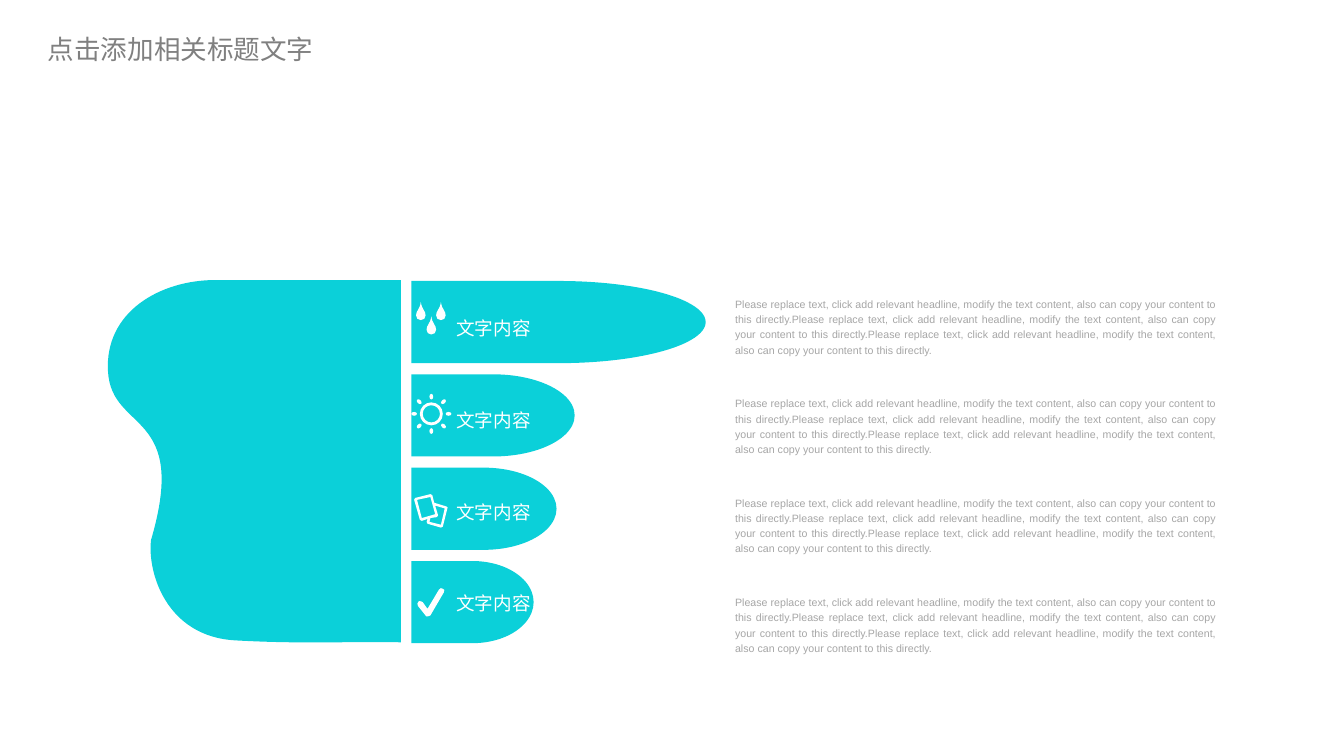
from math import cos, pi, sin

from lxml.etree import SubElement
from pptx import Presentation
from pptx.dml.color import RGBColor
from pptx.enum.shapes import MSO_SHAPE
from pptx.enum.text import MSO_AUTO_SIZE, PP_ALIGN
from pptx.oxml.ns import qn
from pptx.util import Inches, Pt

WIDTH, HEIGHT = 14.06, 7.91
CYAN = RGBColor(0x0B, 0xD0, 0xD9)
WHITE = RGBColor(0xFF, 0xFF, 0xFF)
TITLE_GREY = RGBColor(0x80, 0x80, 0x80)
BODY_GREY = RGBColor(0xA6, 0xA6, 0xA6)

TITLE = "点击添加相关标题文字"
LABEL = "文字内容"
SENTENCE = ("Please replace text, click add relevant headline, modify the text "
            "content, also can copy your content to this directly.")
ROWS = 4
ARC = 0.55

PALM_WIDTH, PALM_HEIGHT = 3.06, 3.79
PALM = [(0.45, 2.72),
        (0.85, 1.36, 0.04, 1.6, 0, 0.96), (-0.04, 0.33, 0.55, 0, 1.12, 0),
        (3.06, 0), (3.06, 3.79), (2.48, 3.78, 2.04, 3.81, 1.33, 3.77),
        (0.61, 3.73, 0.41, 3.06, 0.45, 2.72)]
DROP = [(0, 0), (-0.01, 0.08, -0.05, 0.09, -0.05, 0.14),
        (-0.05, 0.17, -0.03, 0.19, 0, 0.19),
        (0.03, 0.19, 0.05, 0.17, 0.05, 0.14), (0.05, 0.09, 0.01, 0.08, 0, 0)]
DROP_TIPS = [(-0.11, -0.17), (0.1, -0.17), (0, -0.02)]
CARDS = [
    [(0.16, -0.05), (0.03, -0.09), (0.01, -0.17), (-0.01, -0.18),
     (-0.17, -0.14), (-0.18, -0.12), (-0.12, 0.09), (-0.1, 0.1),
     (-0.04, 0.08), (-0.05, 0.11), (-0.04, 0.13), (0.1, 0.17),
     (0.12, 0.16), (0.17, -0.04)],
    [(-0.15, -0.12), (-0.01, -0.15), (0.04, 0.03), (-0.1, 0.07)],
    [(0.1, 0.14), (-0.02, 0.11), (-0.01, 0.07), (0.06, 0.06),
     (0.07, 0.04), (0.04, -0.06), (0.14, -0.03)]]
CHECK = [(-0.04, 0.15), (-0.05, 0.15, -0.06, 0.15, -0.06, 0.14),
         (-0.14, 0.04), (-0.15, 0.02, -0.15, 0.01, -0.13, -0.01),
         (-0.12, -0.01, -0.1, -0.01, -0.09, 0), (-0.04, 0.07),
         (0.08, -0.13), (0.09, -0.15, 0.11, -0.15, 0.12, -0.14),
         (0.14, -0.14, 0.14, -0.12, 0.13, -0.1), (-0.01, 0.14),
         (-0.02, 0.14, -0.03, 0.15, -0.04, 0.15)]


def ellipse(rx, ry, distance=0, angle=0):
    """Return an ellipse moved up by a distance, then turned about the centre."""
    def turn(*nodes):
        """Place unit-circle nodes and join them into one tuple."""
        placed = [(x * rx, y * ry - distance) for x, y in nodes]
        return tuple(v for x, y in placed
                     for v in (x * cos(angle) - y * sin(angle),
                               x * sin(angle) + y * cos(angle)))

    corners = [(1, 0), (0, 1), (-1, 0), (0, -1), (1, 0)]
    curves = [turn((a + ARC * c, b + ARC * d), (c + ARC * a, d + ARC * b), (c, d))
              for (a, b), (c, d) in zip(corners, corners[1:])]
    return [turn((1, 0))] + curves


def paint(shape, color):
    """Give a shape a flat fill without line or shadow."""
    shape.shadow.inherit = False
    shape.fill.solid()
    shape.fill.fore_color.rgb = color
    shape.line.fill.background()


def draw_outlines(s, outlines, left, top, color, width=1, height=1):
    """Draw closed outlines of lines and cubic curves as one freeform."""
    def place(segment):
        """Turn a flat segment into slide positions."""
        return [(Inches(left + x * width), Inches(top + y * height))
                for x, y in zip(segment[::2], segment[1::2])]

    builder, segments = None, []
    for outline in outlines:
        (start,), *rest = map(place, outline)
        if builder is None:
            builder = s.shapes.build_freeform(*start, scale=1.0)
        else:
            builder.move_to(*start)
        builder.add_line_segments([nodes[-1] for nodes in rest], close=True)
        segments += rest
    shape = builder.convert_to_shape()
    paint(shape, color)
    for line, nodes in zip(list(shape.element.iter(qn("a:lnTo"))), segments):
        if len(nodes) == 3:
            curve = line.getparent().makeelement(qn("a:cubicBezTo"))
            for x, y in nodes:
                SubElement(curve, qn("a:pt"), x=str(x - shape.left), y=str(y - shape.top))
            line.getparent().replace(line, curve)


def add_text(s, text, box, font, margins=(0, 0), frame=None, paragraph=None):
    """Add a one-paragraph text box with the given formats."""
    tf = s.shapes.add_textbox(*map(Inches, box)).text_frame
    side, end = map(Inches, margins)
    p = tf.paragraphs[0]
    r = p.add_run()
    r.text = text
    r.font.color.rgb = font["color"]
    insets = {"margin_left": side, "margin_right": side,
              "margin_top": end, "margin_bottom": end}
    styles = {"name": font["name"], "size": Pt(font["size"])}
    for target, formats in ((tf, {**insets, **(frame or {})}),
                            (p, paragraph or {}), (r.font, styles)):
        for name, value in formats.items():
            setattr(target, name, value)


def draw_hand(s, box):
    """Draw the palm and four fingers, each with an icon and a label."""
    left, top, width, height = box
    palm_width = 0.49 * width
    draw_outlines(s, [PALM], left, top, CYAN,
                  palm_width / PALM_WIDTH, height / PALM_HEIGHT)

    finger_left, finger_height = left + palm_width + 0.11, 0.86
    pitch = (height - finger_height) / (ROWS - 1)
    fingers = s.shapes.add_group_shape()
    for row, length in enumerate((3.08, 1.71, 1.52, 1.28)):
        place = finger_left, top + 0.01 + row * pitch, length, finger_height
        paint(fingers.shapes.add_shape(MSO_SHAPE.FLOWCHART_DELAY, *map(Inches, place)), CYAN)

    drops = [[tuple(v + tip[i % 2] for i, v in enumerate(part)) for part in DROP]
             for tip in DROP_TIPS]
    sun = [ellipse(0.12, 0.12), ellipse(0.09, 0.09)]
    sun += [ellipse(0.02, 0.03, 0.18, ray * pi / 4) for ray in range(8)]
    icons = ((drops, 0.06), (sun, 0.1), (CARDS, 0.16), ([CHECK], 0.15))
    for row, (icon, drop) in enumerate(icons):
        label_top = top + 0.34 + row * 0.96
        draw_outlines(s, icon, finger_left + 0.21, label_top + drop, WHITE)
        add_text(s, LABEL, (finger_left + 0.47, label_top, 0.79, 0.28),
                 {"name": "Arial", "size": 14, "color": WHITE},
                 frame={"word_wrap": False, "auto_size": MSO_AUTO_SIZE.SHAPE_TO_FIT_TEXT},
                 paragraph={"line_spacing": 1.2})


def draw_descriptions(s, box):
    """Stack four equal justified descriptions in a box."""
    left, top, width, height = box
    text_height = 0.65
    pitch = (height - text_height) / (ROWS - 1)
    for row in range(ROWS):
        add_text(s, SENTENCE * 3, (left, top + row * pitch, width, text_height),
                 {"name": "Arial", "size": 8, "color": BODY_GREY},
                 frame={"word_wrap": True, "auto_size": MSO_AUTO_SIZE.SHAPE_TO_FIT_TEXT},
                 paragraph={"line_spacing": 1.2, "alignment": PP_ALIGN.JUSTIFY})


def draw_title(s, box):
    """Write the slide title in a box."""
    add_text(s, TITLE, box,
             {"name": "Noto Sans CJK SC", "size": 20, "color": TITLE_GREY},
             margins=(0.1, 0.05), frame={"word_wrap": True},
             paragraph={"space_after": Pt(6)})


def main():
    """Build and save the slide."""
    prs = Presentation()
    prs.slide_width, prs.slide_height = Inches(WIDTH), Inches(HEIGHT)
    s = prs.slides.add_slide(prs.slide_layouts[6])
    draw_hand(s, (1.13, 2.93, 6.25, 3.79))
    draw_descriptions(s, (7.69, 3.09, 5.04, 3.77))
    draw_title(s, (0.4, 0.29, 3.35, 0.41))
    prs.save("out.pptx")


if __name__ == "__main__":
    main()
